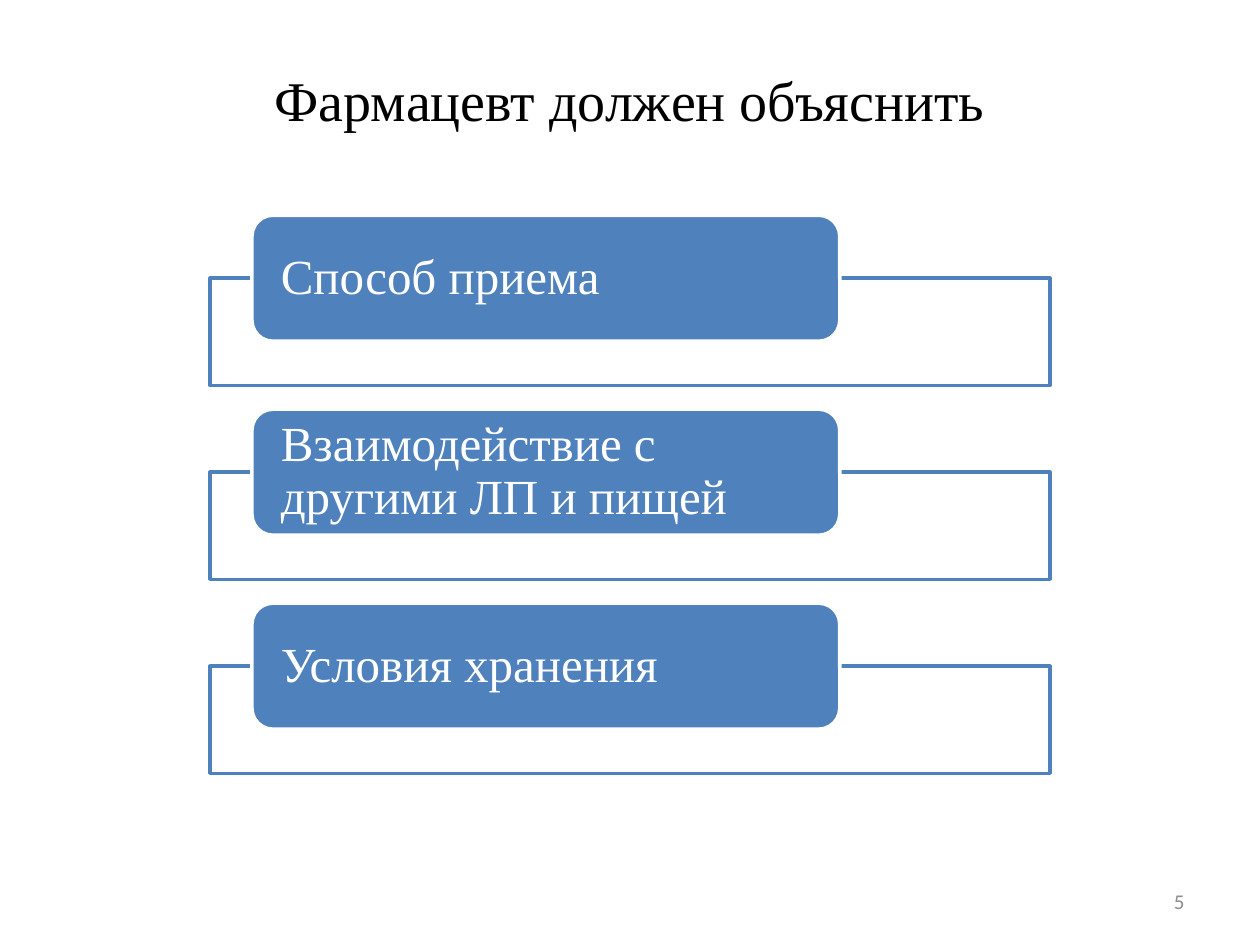
from lxml.etree import SubElement
from pptx import Presentation
from pptx.dml.color import RGBColor
from pptx.enum.shapes import MSO_SHAPE
from pptx.enum.text import MSO_ANCHOR, PP_ALIGN
from pptx.oxml.ns import qn
from pptx.util import Cm, Pt

# Content
TITLE = "Фармацевт должен объяснить"
TOPICS = ["Способ приема", "Взаимодействие с другими ЛП и пищей", "Условия хранения"]
PAGE_NUMBER = "5"

COLORS = {"blue": "4F81BD", "white": "FFFFFF", "black": "000000", "gray": "8C8C8C"}
SERIF, SANS = "Times New Roman", "Calibri"

# Layout in centimetres
SLIDE_W, SLIDE_H = 25.4, 19.05
FRAME_W, FRAME_H = 16.93, 2.16
FRAME_LEFT = (SLIDE_W - FRAME_W) / 2
LABEL_LEFT, LABEL_W, LABEL_H = 5.08, 11.85, 2.54
FIRST_TOP, TOPIC_STEP = 4.34, 3.91


def color(name):
    return RGBColor.from_string(COLORS[name])


def write(shape, text, size, font, text_color, align, anchor):
    frame = shape.text_frame
    frame.word_wrap = True
    frame.vertical_anchor = anchor
    paragraph = frame.paragraphs[0]
    paragraph.alignment = align
    run = paragraph.add_run()
    run.text = text
    run.font.size = Pt(size)
    run.font.name = font
    run.font.color.rgb = color(text_color)
    return frame


def add_box(slide, preset, left, top, width, height, fill, line):
    box = slide.shapes.add_shape(preset, Cm(left), Cm(top), Cm(width), Cm(height))
    box.shadow.inherit = False
    box.fill.solid()
    box.fill.fore_color.rgb = color(fill)
    box.line.color.rgb = color(line)
    box.line.width = Pt(2)
    return box


def add_topic(slide, topic, top):
    # Frame starts at the middle of its label; its fill is 90 % opaque
    frame = add_box(slide, MSO_SHAPE.RECTANGLE, FRAME_LEFT, top + LABEL_H / 2,
                    FRAME_W, FRAME_H, "white", "blue")
    fill_color = frame.fill._xPr.find(qn("a:solidFill"))[0]
    SubElement(fill_color, qn("a:alpha"), val="90000")

    label = add_box(slide, MSO_SHAPE.ROUNDED_RECTANGLE, LABEL_LEFT, top,
                    LABEL_W, LABEL_H, "blue", "white")
    text = write(label, topic, 28, SERIF, "white", PP_ALIGN.LEFT, MSO_ANCHOR.MIDDLE)
    text.margin_left = text.margin_right = Cm(0.46)
    text.margin_top = text.margin_bottom = 0
    text.paragraphs[0].line_spacing = 0.9


def main():
    deck = Presentation()
    deck.slide_width, deck.slide_height = Cm(SLIDE_W), Cm(SLIDE_H)
    slide = deck.slides.add_slide(deck.slide_layouts[6])

    # Title
    title = slide.shapes.add_textbox(0, Cm(1.19), Cm(SLIDE_W), Cm(1.63))
    write(title, TITLE, 32, SERIF, "black", PP_ALIGN.CENTER, MSO_ANCHOR.TOP)

    # Page number
    page = slide.shapes.add_textbox(Cm(18.21), Cm(17.65), Cm(5.92), Cm(1.02))
    write(page, PAGE_NUMBER, 12, SANS, "gray", PP_ALIGN.RIGHT, MSO_ANCHOR.MIDDLE)

    # Topics
    for row, topic in enumerate(TOPICS):
        add_topic(slide, topic, FIRST_TOP + row * TOPIC_STEP)

    deck.save("out.pptx")


if __name__ == "__main__":
    main()
